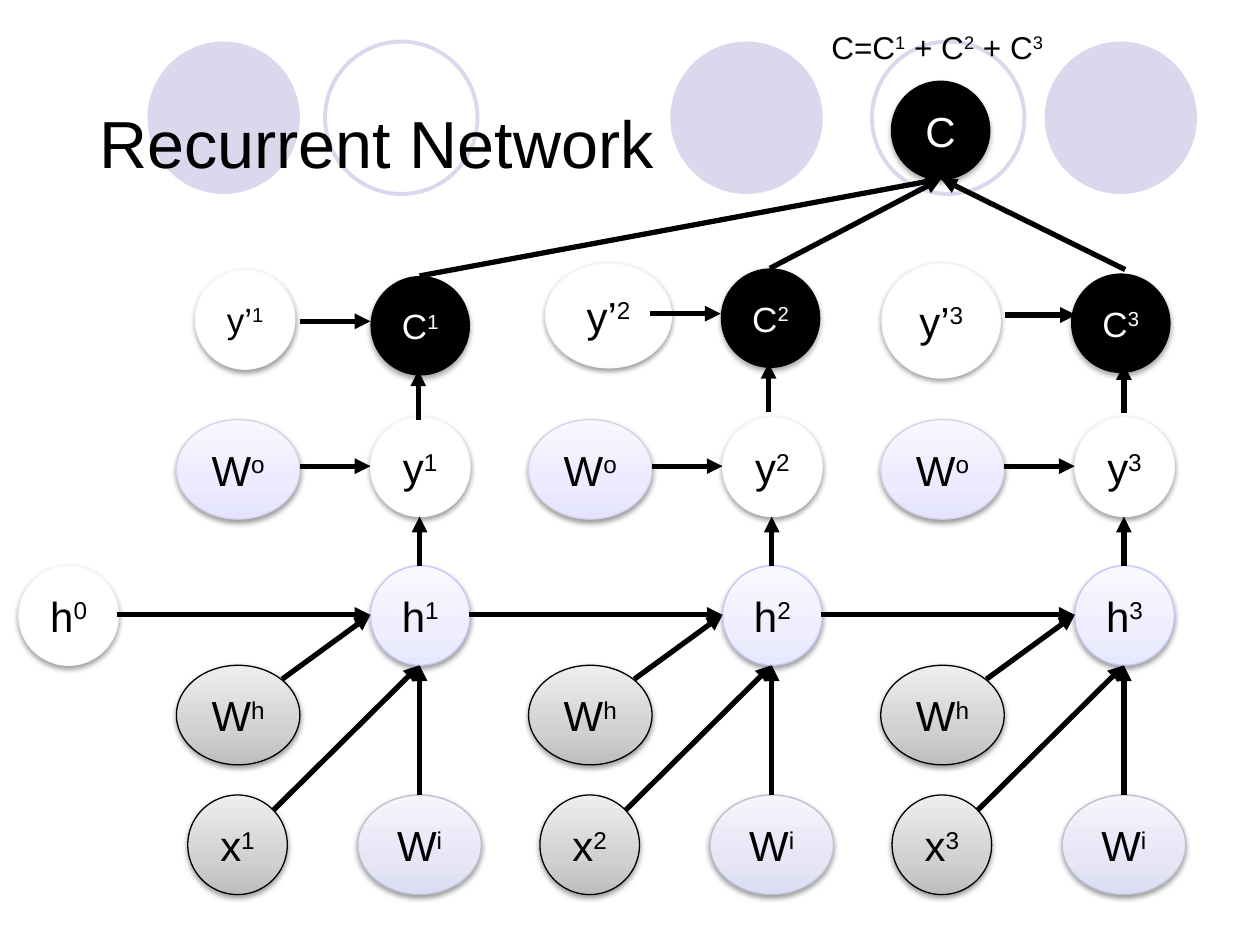
from lxml import etree
from pptx import Presentation
from pptx.dml.color import RGBColor
from pptx.enum.shapes import MSO_CONNECTOR, MSO_SHAPE
from pptx.enum.text import MSO_ANCHOR, PP_ALIGN
from pptx.oxml.ns import qn
from pptx.util import Inches, Pt

OVAL = MSO_SHAPE.OVAL
STRAIGHT = MSO_CONNECTOR.STRAIGHT
CENTER, LEFT = PP_ALIGN.CENTER, PP_ALIGN.LEFT
MIDDLE, TOP = MSO_ANCHOR.MIDDLE, MSO_ANCHOR.TOP

COLORS = {"ink": "000000", "paper": "FFFFFF", "rim": "F9F9F9", "dot": "D9D8EC"}
GRADIENTS = {
    "gray": (("BDBDBD", "D1D1D1", "EEEEEE"), "000000"),
    "input": (("DCDCF3", "E6E6F6", "F5F5FC"), "BFBFD2"),
    "output": (("E5E3FF", "ECEBFF", "F7F7FF"), "D4D3E7"),
    "hidden": (("E7E7FF", "EEEEFF", "F8F8FF"), "C6C6FB"),
}
STOPS = (0, 35, 100)
COLS = 100
R = 7.9
W = 9.8


def rgb(name):
    """Return the colour with this name."""
    return RGBColor.from_string(COLORS[name])


def add_xml(parent, tag, **attrs):
    """Append a child element with the given attributes."""
    child = etree.SubElement(parent, qn(tag))
    for key, value in attrs.items():
        child.set(key, str(value))
    return child


class Diagram:
    """Draws network parts on one slide, measured in grid cells."""

    def __init__(self, prs):
        """Add a blank slide and fix the cell size."""
        self.slide = prs.slides.add_slide(prs.slide_layouts[6])
        self.cell = prs.slide_width / COLS
        self.font = "Arial"

    def emu(self, *cells):
        """Convert grid cells to slide lengths."""
        return [round(c * self.cell) for c in cells]

    def add_runs(self, tf, runs, size, color="ink", align=LEFT, anchor=MIDDLE):
        """Add runs, raising every second one."""
        tf.word_wrap = False
        tf.vertical_anchor = anchor
        p = tf.paragraphs[0]
        p.alignment = align
        for i, text in enumerate(runs):
            r = p.add_run()
            r.text = text
            r.font.name = self.font
            r.font.size = Pt(size)
            r.font.color.rgb = rgb(color)
            if i % 2:
                r.font._element.set("baseline", "30000")

    def text(self, x, y, w, h, runs, size, anchor=MIDDLE):
        """Add a text box."""
        sp = self.slide.shapes.add_textbox(*self.emu(x, y, w, h))
        self.add_runs(sp.text_frame, runs, size, anchor=anchor)

    def dot(self, x, y, filled):
        """Add a decorative circle, filled or outlined."""
        sp = self.slide.shapes.add_shape(OVAL, *self.emu(x, y, 12.1, 12.1))
        sp.shadow.inherit = False
        if filled:
            sp.fill.solid()
            sp.fill.fore_color.rgb = rgb("dot")
            sp.line.fill.background()
        else:
            sp.fill.background()
            sp.line.color.rgb = rgb("dot")
            sp.line.width = Pt(2.25)

    def node(self, x, y, runs, style="paper", w=R, h=R, size=24):
        """Add a labelled ellipse with a soft shadow."""
        sp = self.slide.shapes.add_shape(OVAL, *self.emu(x, y, w, h))
        dark = style == "ink"
        if style in GRADIENTS:
            self.gradient(sp, style)
        else:
            sp.fill.solid()
            sp.fill.fore_color.rgb = rgb(style)
            sp.line.color.rgb = rgb("rim")
            sp.line.width = Pt(0.75)
        if dark:
            sp.line.fill.background()
        self.shadow(sp, *((23000, 35000) if dark else (20000, 38000)))
        self.add_runs(sp.text_frame, runs, size, "paper" if dark else "ink", CENTER)

    def gradient(self, sp, style):
        """Fill a shape from bottom to top with three stops."""
        stops, line = GRADIENTS[style]
        sp.fill.gradient()
        sp.fill.gradient_angle = 90
        gs_list = sp._element.spPr.find(qn("a:gradFill")).find(qn("a:gsLst"))
        for gs in list(gs_list):
            gs_list.remove(gs)
        for pos, color in zip(STOPS, stops):
            gs = add_xml(gs_list, "a:gs", pos=pos * 1000)
            add_xml(gs, "a:srgbClr", val=color)
        sp.line.color.rgb = RGBColor.from_string(line)
        sp.line.width = Pt(0.75)

    def shadow(self, sp, dist, alpha):
        """Give a shape a shadow straight below it."""
        sp.shadow.inherit = False
        effects = sp._element.spPr.find(qn("a:effectLst"))
        outer = add_xml(effects, "a:outerShdw", blurRad=40000, dist=dist,
                        dir=5400000, rotWithShape=0)
        add_xml(add_xml(outer, "a:srgbClr", val=COLORS["ink"]), "a:alpha", val=alpha)

    def arrow(self, x1, y1, x2, y2):
        """Add a thick arrow."""
        sp = self.slide.shapes.add_connector(STRAIGHT, *self.emu(x1, y1, x2, y2))
        sp.line.color.rgb = rgb("ink")
        sp.line.width = Pt(3)
        spPr = sp._element.spPr
        add_xml(spPr.find(qn("a:ln")), "a:tailEnd", type="triangle")
        add_xml(spPr, "a:effectLst")

    def step(self, x, n):
        """Draw the cell of time step n, from inputs to output."""
        self.node(x + 14, 52.8, ["W", "h"], "gray", W)
        self.node(x + 28.4, 63.1, ["W", "i"], "input", W)
        self.node(x + 14, 33.3, ["W", "o"], "output", W)
        self.node(x + 14.9, 63.1, ["x", n], "gray")
        self.node(x + 29.4, 33.1, ["y", n])
        self.node(x + 29.4, 44.9, ["h", n], "hidden")
        mid, left = x + 33.3, x + 29.4
        self.arrow(mid, 63.1, mid, 52.8)
        self.arrow(x + 21.7, 64.3, mid, 52.8)
        self.arrow(x + 22.4, 53.9, left, 48.8)
        self.arrow(x + 9.3, 48.8, left, 48.8)
        self.arrow(mid, 44.9, mid, 41)
        self.arrow(x + 23.8, 37, left, 37)

    def cost(self, n, x, y, cost_at, target, size):
        """Draw the target and cost of time step n with their arrows."""
        tx, ty, tw, th = target
        self.node(tx, ty, ["y’", n], w=tw, h=th, size=size)
        self.node(*cost_at, ["C", n], "ink", size=20)
        self.arrow(x + 3.8, y + 11.4, x + 3.8, y + 7.5)
        self.arrow(x - 5.6, y + 3.6, x, y + 3.6)
        self.arrow(x + 3.9, y, 74.7, 14.2)


def main():
    """Build the slide and save it."""
    prs = Presentation()
    prs.slide_width, prs.slide_height = Inches(10), Inches(7.5)
    net = Diagram(prs)
    for x, filled in ((53.2, True), (82.9, True), (11.7, True),
                      (69.2, False), (25.8, False)):
        net.dot(x, 3.3, filled)
    net.text(6.9, 4, 86.2, 14.5, ["Recurrent Network"], 38)
    net.node(1.5, 44.9, ["h", "0"])
    net.node(70.7, 6.4, ["C"], "ink")
    for i in range(3):
        net.step(i * 27.95, str(i + 1))
    net.cost("1", 29.4, 21.9, (29.4, 21.9), (15.5, 21.4, R, R), 20)
    net.cost("2", 57.2, 21.3, (57.2, 21.3), (43.3, 20.9, 10, 8.3), 24)
    net.cost("3", 85.4, 21.4, (85, 21.7), (70, 20.9, 9.4, 9.1), 24)
    net.text(65, 1.7, 19.3, 4, ["C=C", "1", " + C", "2", " + C", "3"], 18, TOP)
    prs.save("out.pptx")


if __name__ == "__main__":
    main()
